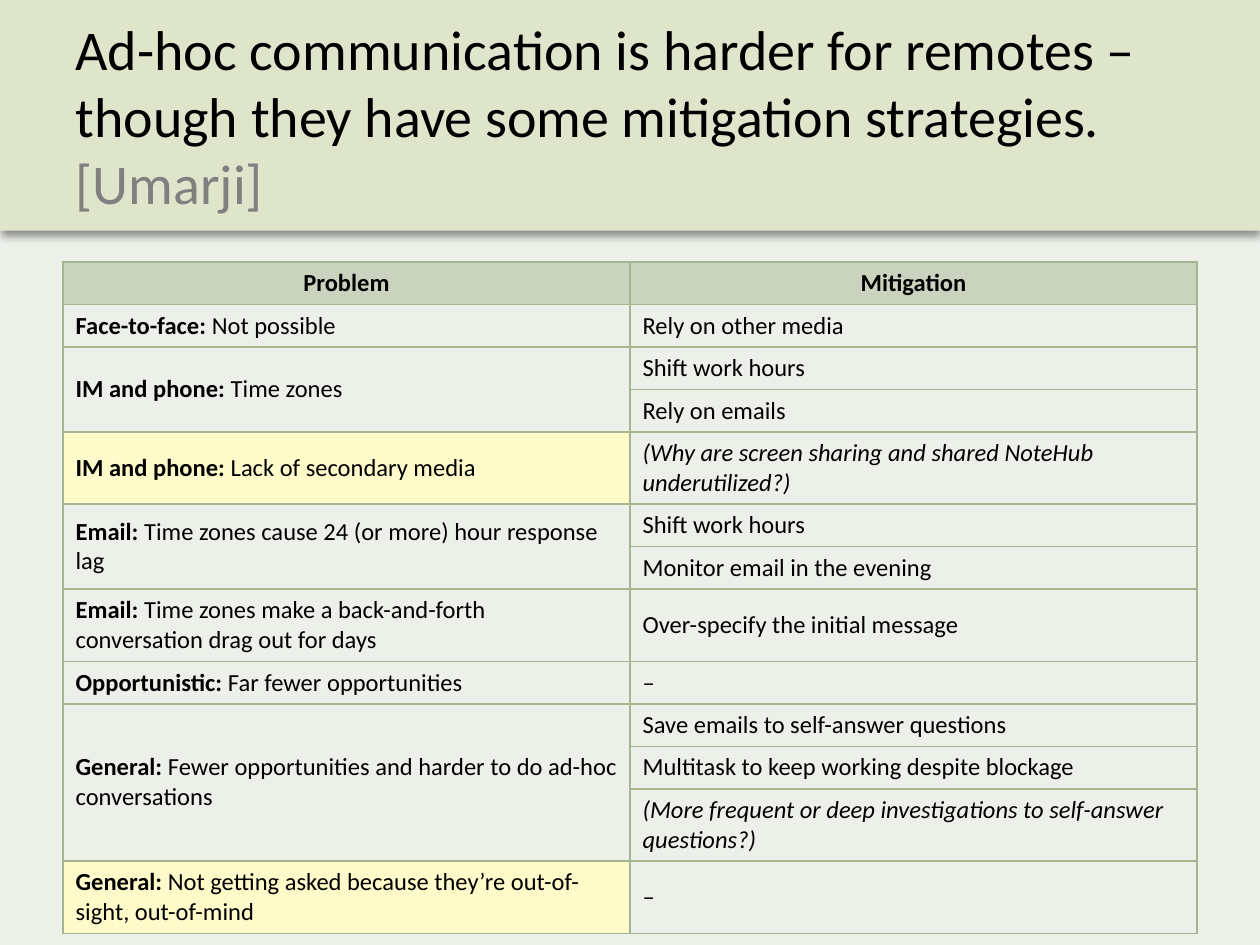
from lxml.etree import SubElement
from pptx import Presentation
from pptx.dml.color import RGBColor
from pptx.enum.text import MSO_ANCHOR as Anchor, MSO_AUTO_SIZE as AutoSize, PP_ALIGN as Align
from pptx.oxml import parse_xml
from pptx.oxml.ns import nsdecls, qn
from pptx.util import Inches, Pt

FONT = "Calibri"
BLACK = RGBColor(0x00, 0x00, 0x00)
GRAY = RGBColor(0x80, 0x80, 0x80)
BACKGROUND = RGBColor(0xED, 0xF0, 0xE9)
BANNER = RGBColor(0xDF, 0xE5, 0xCA)
HEADER = RGBColor(0xC9, 0xD3, 0xBE)
HIGHLIGHT = RGBColor(0xFE, 0xFA, 0xC9)
BORDER = RGBColor(0xA5, 0xB5, 0x92)

SINGLE, DOUBLE = 0.32, 0.56

PROBLEMS = [
    ("Face-to-face: ", "Not possible", None, [("Rely on other media", SINGLE)]),
    ("IM and phone: ", "Time zones", None,
     [("Shift work hours", SINGLE), ("Rely on emails", SINGLE)]),
    ("IM and phone: ", "Lack of secondary media", HIGHLIGHT,
     [("(Why are screen sharing and shared NoteHub underutilized?)", DOUBLE)]),
    ("Email: ", "Time zones cause 24 (or more) hour response lag", None,
     [("Shift work hours", SINGLE), ("Monitor email in the evening", SINGLE)]),
    ("Email: ", "Time zones make a back-and-forth conversation drag out for days", None,
     [("Over-specify the initial message", DOUBLE)]),
    ("Opportunistic: ", "Far fewer opportunities", None, [("–", SINGLE)]),
    ("General: ", "Fewer opportunities and harder to do ad-hoc conversations", None,
     [("Save emails to self-answer questions", SINGLE),
      ("Multitask to keep working despite blockage", SINGLE),
      ("(More frequent or deep investigations to self-answer questions?)", DOUBLE)]),
    ("General: ", "Not getting asked because they’re out-of-sight, out-of-mind", HIGHLIGHT,
     [("–", DOUBLE)]),
]


class SlideBuilder:
    def __init__(self, presentation):
        self.slide = presentation.slides.add_slide(presentation.slide_layouts[5])
        fill = self.slide.background.fill
        fill.solid()
        fill.fore_color.rgb = BACKGROUND

    def style(self, font, size, color=BLACK):
        font.name = FONT
        font.size = Pt(size)
        font.color.rgb = color

    def title(self, text, citation):
        shape = self.slide.shapes.title
        shape.left, shape.top = Inches(0), Inches(0)
        shape.width, shape.height = Inches(10), Inches(1.83)
        shape.fill.solid()
        shape.fill.fore_color.rgb = BANNER
        self.drop_shadow(shape)
        frame = shape.text_frame
        frame.word_wrap = True
        frame.auto_size = AutoSize.NONE
        frame.vertical_anchor = Anchor.MIDDLE
        frame.margin_left = frame.margin_right = Inches(0.6)
        frame.margin_top = frame.margin_bottom = Inches(0.1)
        paragraph = frame.paragraphs[0]
        paragraph.alignment = Align.LEFT
        for words, color in ((text, BLACK), (citation, GRAY)):
            run = paragraph.add_run()
            run.text = words
            self.style(run.font, 32, color)

    def drop_shadow(self, shape):
        shape.shadow.inherit = False
        effects = shape._element.spPr.find(qn("a:effectLst"))
        effects.append(parse_xml(
            f'<a:outerShdw {nsdecls("a")} blurRad="{Pt(4)}" dist="{Pt(3)}" dir="5400000" '
            'rotWithShape="0"><a:srgbClr val="000000"><a:alpha val="40000"/></a:srgbClr>'
            '</a:outerShdw>'))

    def borders(self, cell):
        properties = cell._tc.get_or_add_tcPr()
        for side in ("lnL", "lnR", "lnT", "lnB"):
            line = SubElement(properties, qn(f"a:{side}"), w=str(Pt(1)))
            solid = SubElement(line, qn("a:solidFill"))
            SubElement(solid, qn("a:srgbClr"), val=str(BORDER))

    def cell(self, cell, runs, fill=None, alignment=Align.LEFT):
        if fill is not None:
            cell.fill.solid()
            cell.fill.fore_color.rgb = fill
        cell.vertical_anchor = Anchor.MIDDLE
        paragraph = cell.text_frame.paragraphs[0]
        paragraph.alignment = alignment
        for text, bold in runs:
            run = paragraph.add_run()
            run.text = text
            self.style(run.font, 14)
            run.font.bold = bold
            run.font.italic = text.startswith("(")

    def table(self, headings, problems):
        heights = [SINGLE] + [height for *_, answers in problems for _, height in answers]
        table = self.slide.shapes.add_table(
            len(heights), 2, Inches(0.5), Inches(2.08), Inches(9), Inches(sum(heights))).table
        table.first_row = table.horz_banding = False
        for row, height in zip(table.rows, heights):
            row.height = Inches(height)
        for cell in table.iter_cells():
            self.borders(cell)
            cell.fill.background()
        for column, heading in enumerate(headings):
            self.cell(table.cell(0, column), [(heading, True)], HEADER, Align.CENTER)
        first = 1
        for topic, detail, fill, answers in problems:
            problem = table.cell(first, 0)
            if len(answers) > 1:
                problem.merge(table.cell(first + len(answers) - 1, 0))
            self.cell(problem, [(topic, True), (detail, False)], fill)
            for row, (answer, _) in enumerate(answers, first):
                self.cell(table.cell(row, 1), [(answer, False)])
            first += len(answers)


def main():
    presentation = Presentation()
    presentation.slide_width = Inches(10)
    presentation.slide_height = Inches(7.5)
    builder = SlideBuilder(presentation)
    builder.title("Ad-hoc communication is harder for remotes – though they have some "
                  "mitigation strategies. ", "[Umarji]")
    builder.table(("Problem", "Mitigation"), PROBLEMS)
    presentation.save("out.pptx")


if __name__ == "__main__":
    main()
